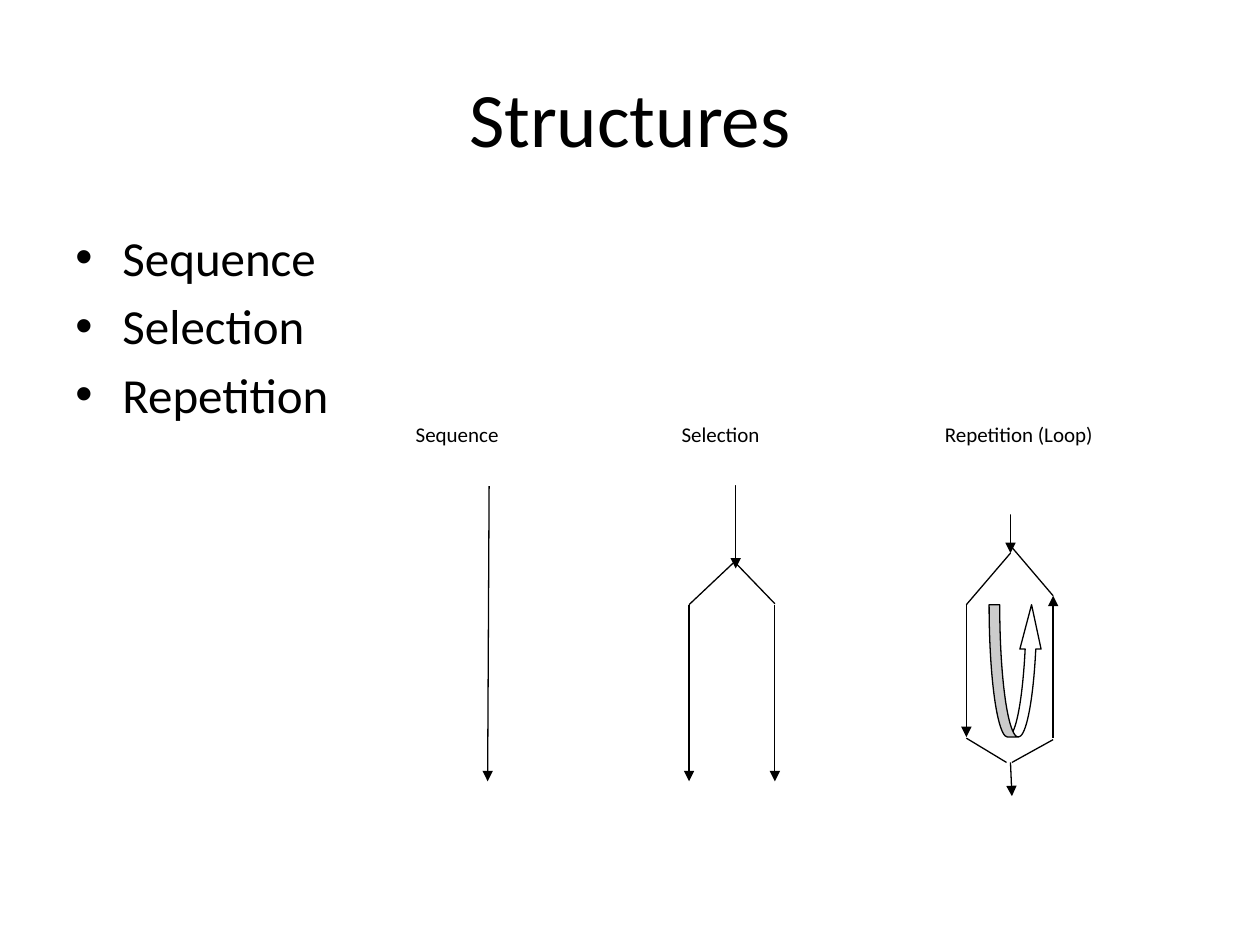
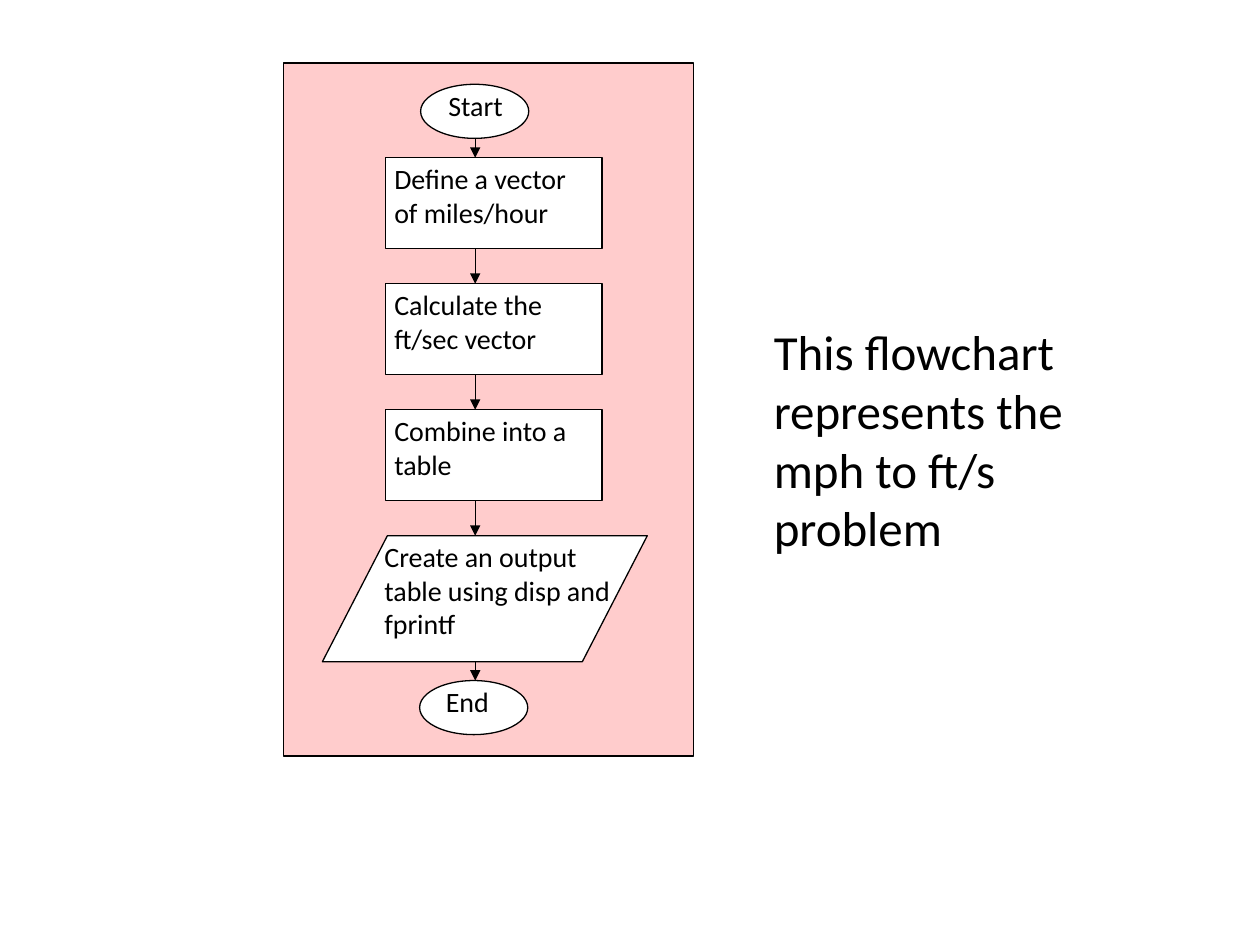
"""Build two slides: program structures and a unit conversion flowchart."""
from dataclasses import dataclass
from itertools import pairwise

from lxml.etree import SubElement
from pptx import Presentation
from pptx.dml.color import RGBColor
from pptx.enum.shapes import MSO_CONNECTOR, MSO_SHAPE as SHAPE
from pptx.enum.text import MSO_ANCHOR as ANCHOR, PP_ALIGN as ALIGN
from pptx.oxml.ns import qn
from pptx.util import Cm, Pt


@dataclass(frozen=True)
class Theme:
    """Colours, font, type sizes and measures shared by the slides."""
    ink: RGBColor = RGBColor(0, 0, 0)
    paper: RGBColor = RGBColor(255, 255, 255)
    panel: RGBColor = RGBColor(255, 204, 204)
    font: str = "Calibri"
    title: int = 44
    body: int = 28
    step: int = 16
    label: int = 12
    line: float = 0.75
    indent: float = 0.95
    body_inset: tuple = (0.25, 0.13)
    step_inset: tuple = (0.18, 0.08)
    label_inset: tuple = (0.15, 0.08)


T = Theme()

TITLE = "Structures"
TITLE_BOX = (1.27, 0.76, 22.86, 3.18)
BULLETS = ["Sequence", "Selection", "Repetition"]
BULLETS_BOX = (1.27, 4.45, 11.23, 12.57)

ARROWS = [
    (9.86, 9.8, 9.83, 15.75),
    (14.83, 9.55, 14.83, 11.46),
    (13.89, 12.19, 13.89, 15.75),
    (15.62, 12.19, 15.62, 15.75),
    (20.37, 9.3, 20.37, 11.15),
    (19.48, 12.17, 19.48, 14.86),
    (21.23, 14.88, 21.23, 12.01),
    (20.37, 15.37, 20.4, 16.05),
]
BRANCHES = [
    (14.78, 11.35, 13.89, 12.19),
    (14.83, 11.35, 15.62, 12.17),
    (20.37, 11.15, 19.48, 12.19),
    (20.37, 11, 21.23, 12.01),
    (19.48, 14.88, 20.29, 15.37),
    (20.4, 15.37, 21.23, 14.91),
]
LOOP_BOX = (19.94, 12.19, 1.07, 2.67)
LOOP_ADJUSTMENTS = (0.2, 0.4, 0.838)
LABELS = [
    ("Sequence", (8.23, 8.41, 3.56, 1.14)),
    ("Selection", (13.59, 8.41, 3.73, 1.37)),
    ("Repetition (Loop)", (18.9, 8.41, 5.33, 1.96)),
]

PANEL_BOX = (5.72, 1.27, 8.26, 13.97)
PROCESSES = ["Define a vector of miles/hour", "Calculate the ft/sec vector",
             "Combine into a table"]
PROCESS_BOX = (7.77, 3.18, 4.37, 1.83)
PROCESS_PITCH = 2.54
START = (SHAPE.OVAL, "Start", (8.48, 1.7, 2.18, 1.09), (8.86, 1.7, 2.18, 0.71))
OUTPUT = (SHAPE.FLOWCHART_DATA, "Create an output table using disp and fprintf",
          (6.5, 10.8, 6.55, 2.54), (7.57, 10.8, 5.21, 2.11))
END = (SHAPE.OVAL, "End", (8.46, 13.72, 2.18, 1.09), (8.81, 13.72, 2.54, 1.09))
FLOW_X = 9.58
NOTE = "This flowchart represents the mph to ft/s problem"
NOTE_BOX = (14.4, 6.35, 9.09, 6.98)


def cm(values):
    return [Cm(v) for v in values]


def write(sp, lines, size, inset=T.body_inset, align=ALIGN.LEFT, anchor=ANCHOR.TOP):
    tf = sp.text_frame
    tf.text = "\n".join(lines)
    tf.word_wrap = True
    tf.vertical_anchor = anchor
    tf.margin_left = tf.margin_right = Cm(inset[0])
    tf.margin_top = tf.margin_bottom = Cm(inset[1])
    for p in tf.paragraphs:
        p.alignment = align
        for r in p.runs:
            r.font.name, r.font.size = T.font, Pt(size)
            r.font.color.rgb = T.ink


def add_text(s, box, lines, size, inset=T.body_inset):
    sp = s.shapes.add_textbox(*cm(box))
    write(sp, lines, size, inset)
    return sp


def add_body(s, box, lines, bullet=None):
    sp = add_text(s, box, lines, T.body)
    for p in sp.text_frame.paragraphs:
        p.space_before = Pt(T.body * 0.2)
        pPr = p._p.get_or_add_pPr()
        pPr.set("marL", str(Cm(T.indent)))
        pPr.set("indent", str(-Cm(T.indent) if bullet else 0))
        if bullet:
            SubElement(pPr, qn("a:buFont"), typeface="Arial")
            SubElement(pPr, qn("a:buChar"), char=bullet)


def add_shape(s, kind, box, fill=T.paper, outlined=True):
    sp = s.shapes.add_shape(kind, *cm(box))
    sp.shadow.inherit = False
    sp.fill.solid()
    sp.fill.fore_color.rgb = fill
    if outlined:
        sp.line.color.rgb = T.ink
        sp.line.width = Pt(T.line)
    else:
        sp.line.fill.background()
    return sp


def add_line(s, ends, arrow=False):
    c = s.shapes.add_connector(MSO_CONNECTOR.STRAIGHT, *cm(ends))
    c.line.color.rgb = T.ink
    c.line.width = Pt(T.line)
    if arrow:
        SubElement(c.line._get_or_add_ln(), qn("a:tailEnd"), type="triangle")
    SubElement(c._element.spPr, qn("a:effectLst"))


def build_structures(prs):
    s = prs.slides.add_slide(prs.slide_layouts[5])
    title = s.shapes.title
    title.left, title.top, title.width, title.height = cm(TITLE_BOX)
    write(title, [TITLE], T.title, align=ALIGN.CENTER, anchor=ANCHOR.MIDDLE)
    add_body(s, BULLETS_BOX, BULLETS, "•")
    for ends in ARROWS:
        add_line(s, ends, arrow=True)
    for ends in BRANCHES:
        add_line(s, ends)
    loop = add_shape(s, SHAPE.CURVED_UP_ARROW, LOOP_BOX)
    for i, value in enumerate(LOOP_ADJUSTMENTS):
        loop.adjustments[i] = value
    for text, box in LABELS:
        sp = add_shape(s, SHAPE.RECTANGLE, box, outlined=False)
        write(sp, [text], T.label, T.label_inset)


def build_flowchart(prs):
    s = prs.slides.add_slide(prs.slide_layouts[6])
    add_shape(s, SHAPE.RECTANGLE, PANEL_BOX, T.panel)
    x, y, w, h = PROCESS_BOX
    processes = [(SHAPE.RECTANGLE, text, (x, y + i * PROCESS_PITCH, w, h), None)
                 for i, text in enumerate(PROCESSES)]
    steps = [START, *processes, OUTPUT, END]
    for kind, text, box, text_box in steps:
        sp = add_shape(s, kind, box)
        if text_box:
            add_text(s, text_box, [text], T.step, T.step_inset)
        else:
            write(sp, [text], T.step, T.step_inset)
    for (_, _, upper, _), (_, _, lower, _) in pairwise(steps):
        add_line(s, (FLOW_X, upper[1] + upper[3], FLOW_X, lower[1]), arrow=True)
    add_body(s, NOTE_BOX, [NOTE])


def main():
    prs = Presentation()
    prs.slide_width, prs.slide_height = Cm(25.4), Cm(19.05)
    build_structures(prs)
    build_flowchart(prs)
    prs.save("out.pptx")


if __name__ == "__main__":
    main()
